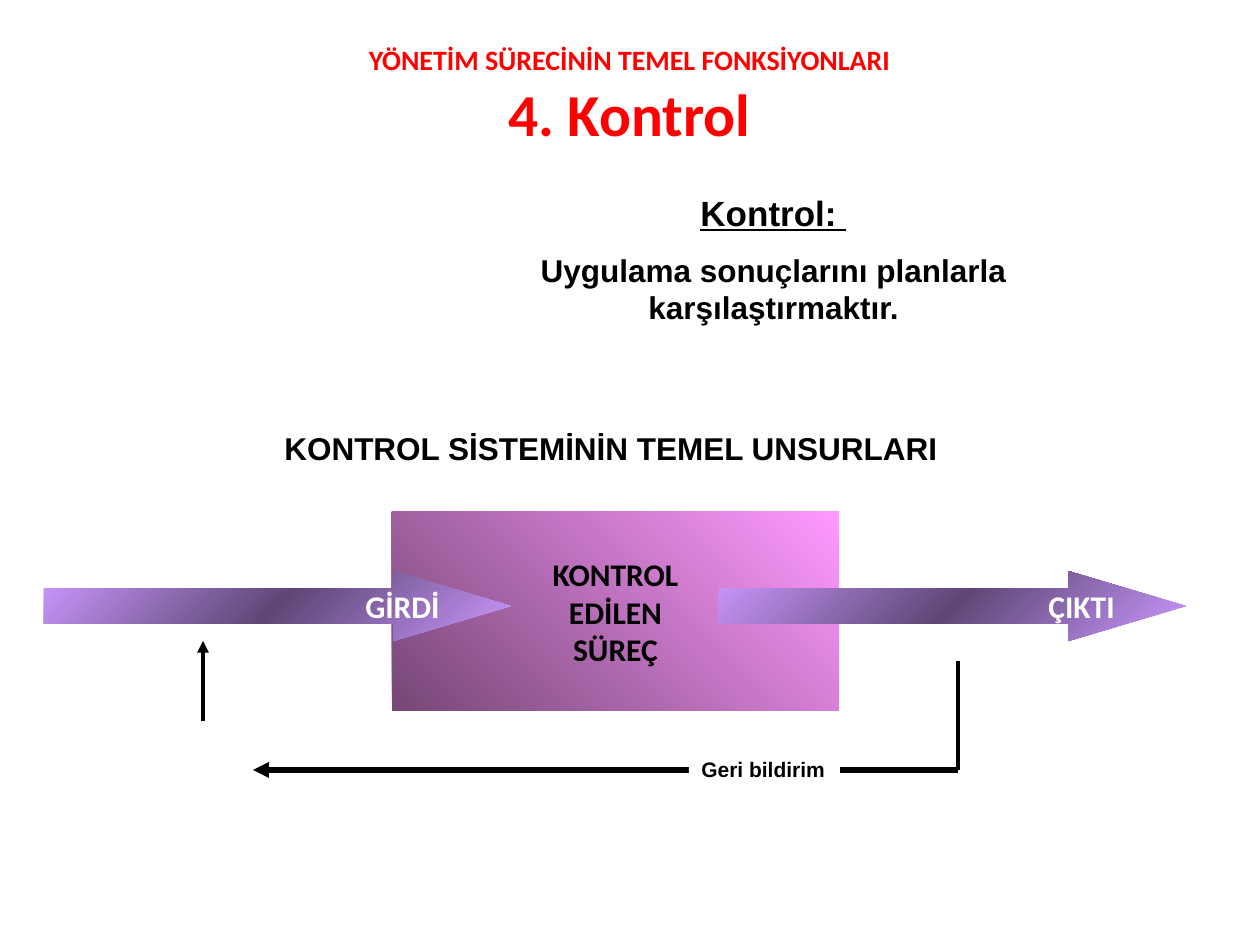
from copy import deepcopy

from pptx import Presentation
from pptx.dml.color import RGBColor
from pptx.enum.shapes import MSO_CONNECTOR, MSO_SHAPE
from pptx.enum.text import MSO_ANCHOR, PP_ALIGN
from pptx.oxml.ns import qn
from pptx.util import Emu, Pt
from lxml import etree

RECTANGLE, RIGHT_ARROW = MSO_SHAPE.RECTANGLE, MSO_SHAPE.RIGHT_ARROW
STRAIGHT = MSO_CONNECTOR.STRAIGHT
LEFT, CENTER, RIGHT = PP_ALIGN.LEFT, PP_ALIGN.CENTER, PP_ALIGN.RIGHT
TOP, MIDDLE = MSO_ANCHOR.TOP, MSO_ANCHOR.MIDDLE
BLACK, WHITE, RED = "000000", "FFFFFF", "FF0000"
PINK_BLEND = ("764776", "FF99FF")
PURPLE_BLEND = ("CC99FF", "5E4776", "CC99FF")


def px(value):
    return Emu(round(value * 914400 / 126))


def rgb(value):
    return RGBColor.from_string(value)


class ControlSlide:
    def __init__(self, deck):
        self.page = deck.slides.add_slide(deck.slide_layouts[6])

    def span(self, para, words, size, font, color, underline=False):
        span = para.add_run()
        span.text = words
        span.font.name = font
        span.font.size = Pt(size)
        span.font.bold = True
        if underline:
            span.font.underline = True
        span.font.color.rgb = rgb(color)

    def fill_text(self, box, lines, font, color=BLACK, align=LEFT, anchor=TOP, gap=0, wrap=True):
        frame = box.text_frame
        frame.word_wrap = wrap
        frame.vertical_anchor = anchor
        for index, (words, size, *underline) in enumerate(lines):
            para = frame.add_paragraph() if index else frame.paragraphs[0]
            para.alignment = align
            if index and gap:
                para.space_before = Pt(gap)
            self.span(para, words, size, font, color, *underline)

    def text(self, place, lines, font, **style):
        box = self.page.shapes.add_textbox(*map(px, place))
        self.fill_text(box, lines, font, **style)

    def title(self, place, small, large):
        box = self.page.shapes.add_textbox(*map(px, place))
        self.fill_text(box, [(small, 16)], "Calibri", RED, CENTER, MIDDLE)
        para = box.text_frame.paragraphs[0]
        para.add_line_break()
        self.span(para, large, 34, "Calibri", RED)

    def shape(self, kind, place):
        shape = self.page.shapes.add_shape(kind, *map(px, place))
        shape.shadow.inherit = False
        shape.line.fill.background()
        return shape

    def blend(self, shape, colors, angle):
        shape.fill.gradient()
        shape.fill.gradient_angle = angle
        stop_list = shape._element.spPr.find(qn("a:gradFill")).find(qn("a:gsLst"))
        for _ in colors[2:]:
            stop_list.append(deepcopy(stop_list[-1]))
        for index, (stop, color) in enumerate(zip(shape.fill.gradient_stops, colors)):
            stop.position = index / (len(colors) - 1)
            stop.color.rgb = rgb(color)

    def process(self, place, lines):
        box = self.shape(RECTANGLE, place)
        self.blend(box, PINK_BLEND, 45)
        self.fill_text(box, lines, "Calibri", align=CENTER, anchor=MIDDLE, wrap=False)

    def flow_arrow(self, left, words):
        arrow = self.shape(RIGHT_ARROW, (left, 571, 467, 70))
        arrow.adjustments[0] = 0.5
        arrow.adjustments[1] = 1.68
        self.blend(arrow, PURPLE_BLEND, 315)
        self.fill_text(arrow, [(words, 18)], "Calibri", WHITE, RIGHT, MIDDLE, wrap=False)

    def label(self, place, words):
        box = self.shape(RECTANGLE, place)
        box.fill.solid()
        box.fill.fore_color.rgb = rgb(WHITE)
        self.fill_text(box, [(words, 12)], "Arial", wrap=False)

    def line(self, start, end, width, arrowhead=False):
        line = self.page.shapes.add_connector(STRAIGHT, *map(px, start + end))
        line.line.color.rgb = rgb(BLACK)
        line.line.width = Pt(width)
        properties = line._element.spPr
        if arrowhead:
            etree.SubElement(properties.find(qn("a:ln")), qn("a:tailEnd"), type="triangle")
        etree.SubElement(properties, qn("a:effectLst"))


def main():
    deck = Presentation()
    deck.slide_width, deck.slide_height = px(1260), px(945)
    slide = ControlSlide(deck)

    slide.text(
        (451, 185, 645, 150),
        [("Kontrol: ", 20, True), ("Uygulama sonuçlarını planlarla karşılaştırmaktır.", 18)],
        "Arial", align=CENTER, gap=10,
    )
    slide.text((272, 423, 694, 50), [("KONTROL SİSTEMİNİN TEMEL UNSURLARI", 18)], "Arial")

    slide.process((392, 512, 447, 199), [(word, 18) for word in ("KONTROL", "EDİLEN", "SÜREÇ")])
    slide.flow_arrow(44, "GİRDİ")
    slide.flow_arrow(719, "ÇIKTI")

    corner = (958, 770)
    slide.line((958, 661), corner, 2.25)
    slide.line(corner, (253, 770), 3, arrowhead=True)
    slide.line((203, 721), (203, 641), 2.25, arrowhead=True)
    slide.label((689, 750, 151, 38), "Geri bildirim")

    slide.title((64, 26, 1131, 139), "YÖNETİM SÜRECİNİN TEMEL FONKSİYONLARI", "4. Kontrol")
    deck.save("out.pptx")


if __name__ == "__main__":
    main()
